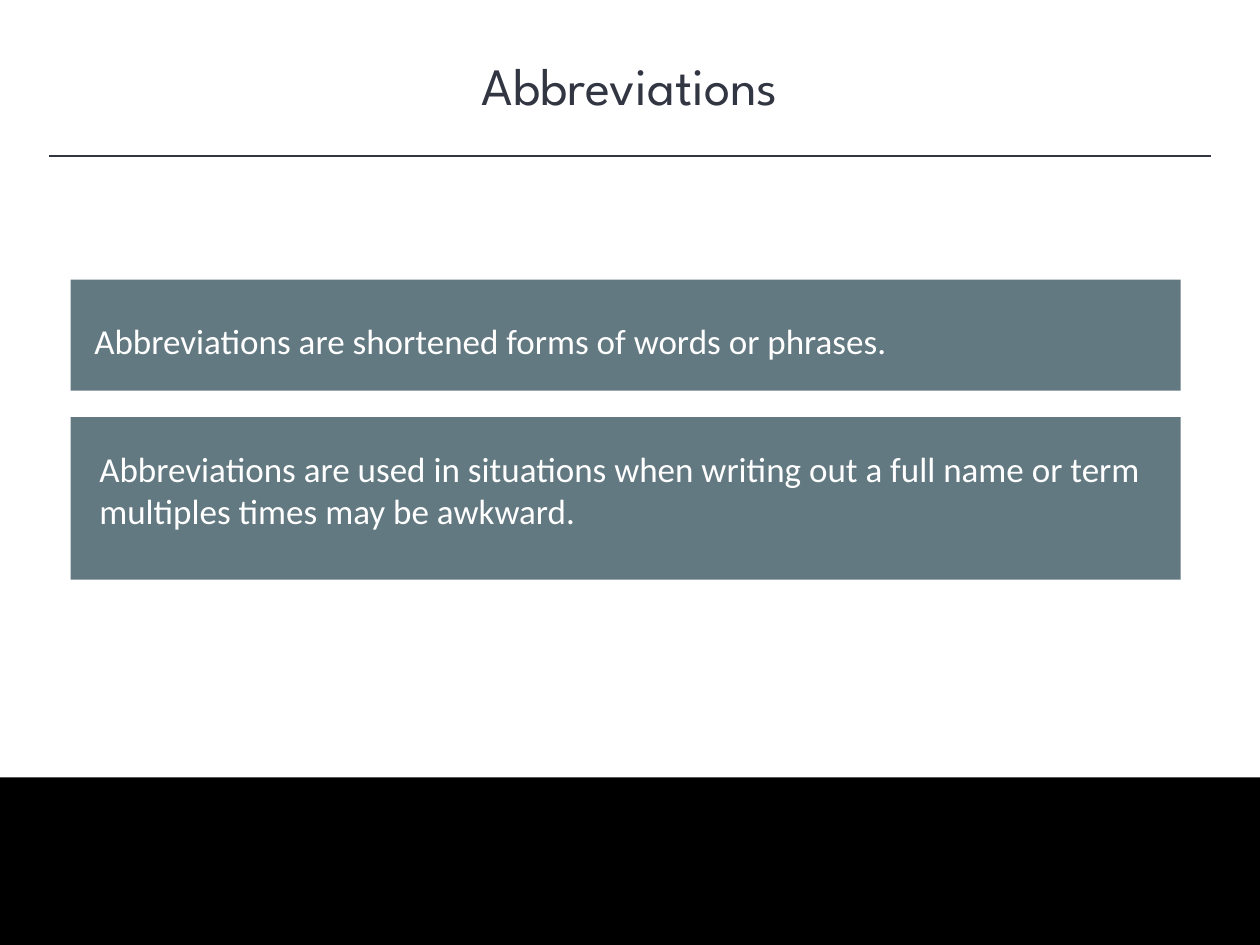
from lxml.etree import SubElement
from pptx import Presentation
from pptx.dml.color import RGBColor
from pptx.enum.shapes import MSO_CONNECTOR, MSO_SHAPE
from pptx.enum.text import MSO_ANCHOR, PP_ALIGN
from pptx.oxml.ns import qn
from pptx.util import Inches, Pt

INK = RGBColor(0x32, 0x35, 0x42)
SLATE = RGBColor(0x62, 0x79, 0x81)
BLACK = RGBColor(0, 0, 0)
WHITE = RGBColor(0xFF, 0xFF, 0xFF)

WIDTH, HEIGHT = 10, 7.5
RULE_MARGIN, RULE_TOP = 0.39, 1.24
FOOTER_TOP = 6.17
PANEL_LEFT, PANEL_WIDTH = 0.56, 8.81
STATEMENT_WIDTH = 8.54

prs = Presentation()
prs.slide_width, prs.slide_height = Inches(WIDTH), Inches(HEIGHT)
slide = prs.slides.add_slide(prs.slide_layouts[5])
slide.background.fill.solid()
slide.background.fill.fore_color.rgb = WHITE


def write(shape, text, *, font, size, color, align=PP_ALIGN.LEFT):
    frame = shape.text_frame
    frame.word_wrap = True
    frame.vertical_anchor = MSO_ANCHOR.TOP
    paragraph = frame.paragraphs[0]
    paragraph.alignment = align
    run = paragraph.add_run()
    run.text = text
    run.font.name, run.font.size = font, Pt(size)
    run.font.color.rgb = color


def add_block(left, top, width, height, color):
    block = slide.shapes.add_shape(
        MSO_SHAPE.RECTANGLE, Inches(left), Inches(top), Inches(width), Inches(height))
    block.shadow.inherit = False
    block.fill.solid()
    block.fill.fore_color.rgb = color
    block.line.fill.background()
    return block


heading = slide.shapes.title
heading.left, heading.top = 0, Inches(0.37)
heading.width, heading.height = prs.slide_width, Inches(0.61)
write(heading, "Abbreviations", font="League Spartan", size=30, color=INK,
      align=PP_ALIGN.CENTER)

add_block(0, FOOTER_TOP, WIDTH, HEIGHT - FOOTER_TOP, BLACK)

rule = slide.shapes.add_connector(
    MSO_CONNECTOR.STRAIGHT, Inches(RULE_MARGIN), Inches(RULE_TOP),
    Inches(WIDTH - RULE_MARGIN), Inches(RULE_TOP))
rule.line.color.rgb = INK
rule.line.width = Pt(1)
SubElement(rule._element.spPr, qn("a:effectLst"))

# Panel top and height, then statement left, top and height
statements = [
    (2.22, 0.88, 0.65, 2.49, 0.44,
     "Abbreviations are shortened forms of words or phrases."),
    (3.31, 1.29, 0.69, 3.5, 0.92,
     "Abbreviations are used in situations when writing out a full name or term "
     "multiples times may be awkward."),
]
for panel_top, panel_height, left, top, height, wording in statements:
    add_block(PANEL_LEFT, panel_top, PANEL_WIDTH, panel_height, SLATE)
    statement = add_block(left, top, STATEMENT_WIDTH, height, SLATE)
    write(statement, wording, font="Calibri", size=20, color=WHITE)

prs.save("out.pptx")
